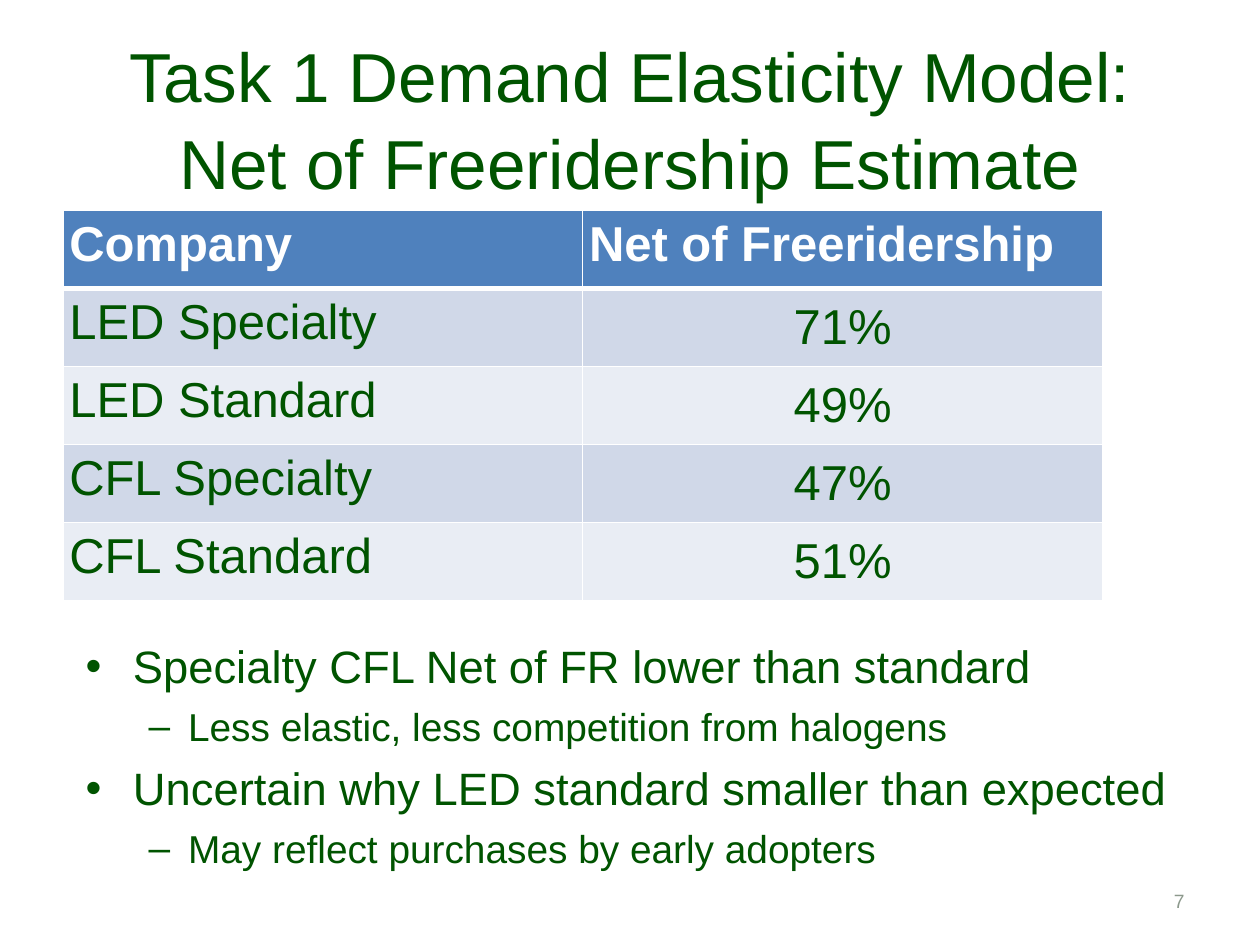
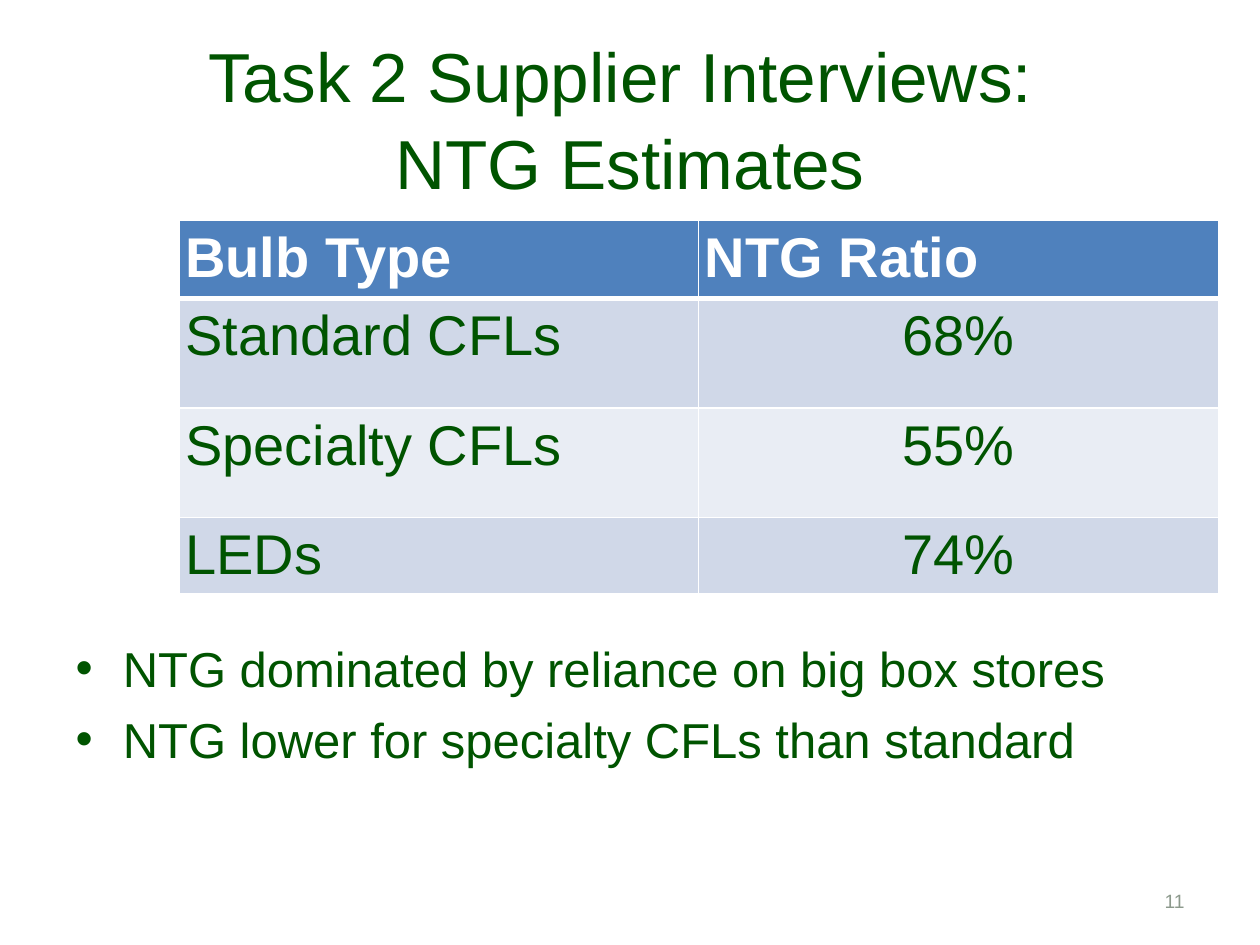
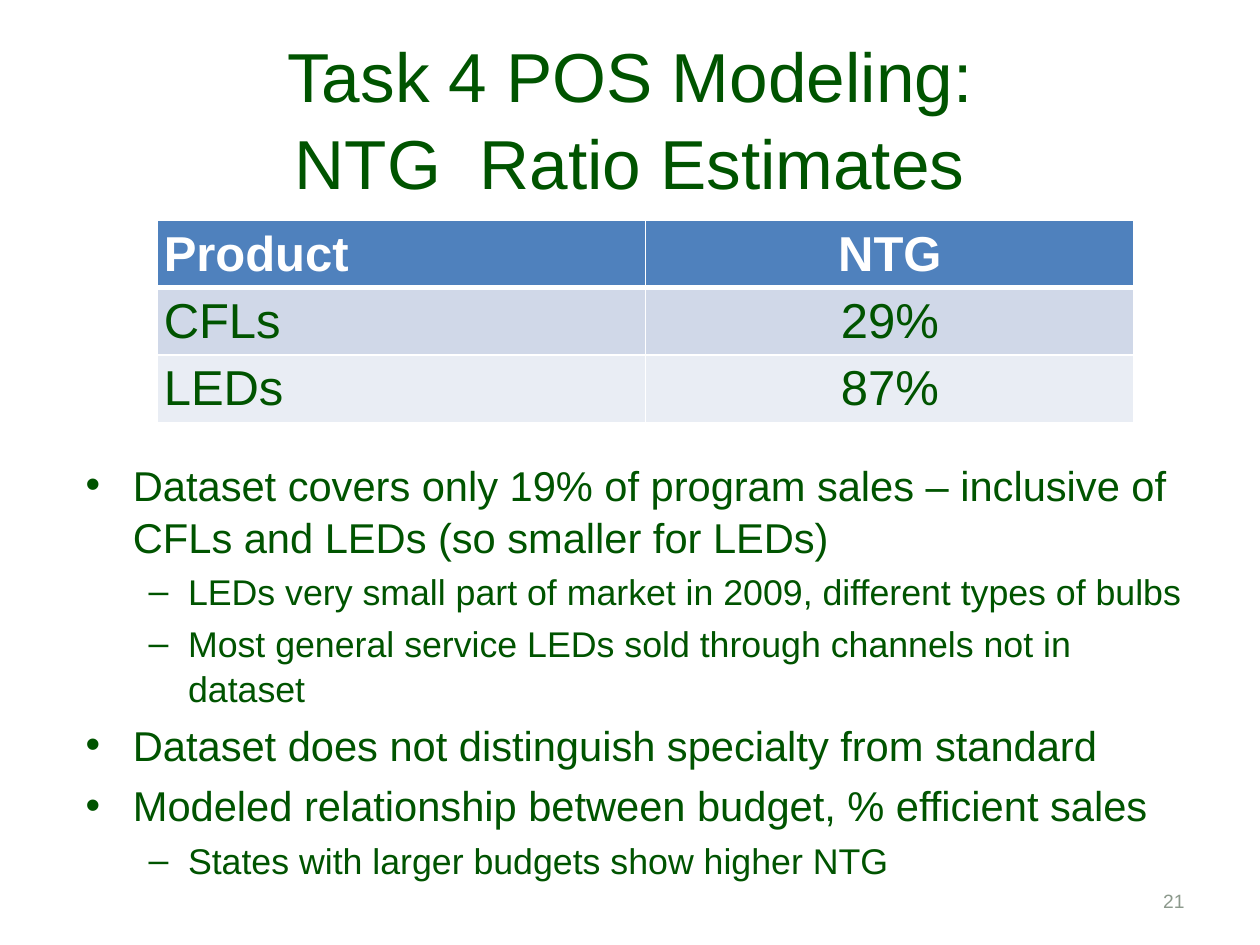
from dataclasses import dataclass

from lxml import etree
from pptx import Presentation
from pptx.dml.color import RGBColor
from pptx.enum.text import MSO_ANCHOR, MSO_AUTO_SIZE, PP_ALIGN
from pptx.oxml.ns import qn
from pptx.util import Inches, Pt

LEFT, CENTER, RIGHT = PP_ALIGN.LEFT, PP_ALIGN.CENTER, PP_ALIGN.RIGHT
TOP, MIDDLE = MSO_ANCHOR.TOP, MSO_ANCHOR.MIDDLE
NO_AUTOFIT = MSO_AUTO_SIZE.NONE


@dataclass(frozen=True)
class Theme:
    font: str = "Arial"
    green: str = "005400"
    white: str = "FFFFFF"
    gray: str = "8C998C"
    header: str = "4F81BD"
    bands: tuple = ("D0D8E8", "E9EDF4")
    title_size: float = 39.6
    number_size: float = 11
    line_spacing: float = 1.04
    cell_margin: float = 0.05
    border: float = 1
    header_border: float = 3


theme = Theme()

slides = [
    {
        "title": "Task 1 Demand Elasticity Model: Net of Freeridership Estimate",
        "number": "7",
        "table_at": (0.5, 1.67, 8.25),
        "row_heights": [0.62] * 5,
        "table_size": 28,
        "header_align": LEFT,
        "value_anchor": MIDDLE,
        "rows": [
            ("Company", "Net of Freeridership"),
            ("LED Specialty", "71%"),
            ("LED Standard", "49%"),
            ("CFL Specialty", "47%"),
            ("CFL Standard", "51%"),
        ],
        "body_at": (0.58, 5, 8.92, 1.75),
        "body_sizes": (25.9, 22.2),
        "bullets": [
            (0, "Specialty CFL Net of FR lower than standard"),
            (1, "Less elastic, less competition from halogens"),
            (0, "Uncertain why LED standard smaller than expected"),
            (1, "May reflect purchases by early adopters"),
        ],
    },
    {
        "title": "Task 2 Supplier Interviews: \vNTG Estimates",
        "number": "11",
        "table_at": (1.42, 1.75, 8.25),
        "row_heights": [0.62, 0.87, 0.87, 0.6],
        "table_size": 32,
        "header_align": LEFT,
        "value_anchor": TOP,
        "rows": [
            ("Bulb Type", "NTG Ratio"),
            ("Standard CFLs", "68%"),
            ("Specialty CFLs", "55%"),
            ("LEDs", "74%"),
        ],
        "body_at": (0.5, 5, 9, 1.25),
        "body_sizes": (28,),
        "bullets": [
            (0, "NTG dominated by reliance on big box stores"),
            (0, "NTG lower for specialty CFLs than standard"),
        ],
    },
    {
        "title": "Task 4 POS Modeling:\vNTG  Ratio Estimates",
        "number": "21",
        "table_at": (1.25, 1.75, 7.75),
        "row_heights": [0.53] * 3,
        "table_size": 28,
        "header_align": CENTER,
        "value_anchor": TOP,
        "rows": [("Product", "NTG"), ("CFLs", "29%"), ("LEDs", "87%")],
        "body_at": (0.58, 3.58, 8.92, 3.12),
        "body_sizes": (23.8, 20.4),
        "bullets": [
            (0, "Dataset covers only 19% of program sales – inclusive of "
                "CFLs and LEDs (so smaller for LEDs)"),
            (1, "LEDs very small part of market in 2009, different types of bulbs"),
            (1, "Most general service LEDs sold through channels not in dataset"),
            (0, "Dataset does not distinguish specialty from standard"),
            (0, "Modeled relationship between budget, % efficient sales"),
            (1, "States with larger budgets show higher NTG"),
        ],
    },
]


def style_text(para, size, color, align=LEFT, bold=False):
    para.alignment = align
    for span in para.runs:
        span.font.name = theme.font
        span.font.size = Pt(size)
        span.font.bold = bold
        span.font.color.rgb = RGBColor.from_string(color)


def add_borders(cell, top, bottom):
    widths = {"L": theme.border, "R": theme.border, "T": top, "B": bottom}
    properties = cell._tc.get_or_add_tcPr()
    for side, width in widths.items():
        line = etree.SubElement(properties, qn(f"a:ln{side}"), w=str(Pt(width)))
        fill = etree.SubElement(line, qn("a:solidFill"))
        etree.SubElement(fill, qn("a:srgbClr"), val=theme.white)


deck = Presentation()
deck.slide_width, deck.slide_height = Inches(10), Inches(7.5)

for content in slides:
    page = deck.slides.add_slide(deck.slide_layouts[1])

    title = page.shapes.title
    title.left, title.top, title.width, title.height = map(Inches, (0.5, 0.3, 9, 1.25))
    title.text_frame.text = content["title"]
    title.text_frame.auto_size = NO_AUTOFIT
    title.text_frame.vertical_anchor = MIDDLE
    title_para = title.text_frame.paragraphs[0]
    title_para.line_spacing = theme.line_spacing
    style_text(title_para, theme.title_size, theme.green, CENTER)

    left, top, width = map(Inches, content["table_at"])
    rows, heights = content["rows"], content["row_heights"]
    table = page.shapes.add_table(
        len(rows), 2, left, top, width, Inches(sum(heights))).table
    for row_index, (texts, height) in enumerate(zip(rows, heights)):
        table.rows[row_index].height = Inches(height)
        is_header = row_index == 0
        for column, text in enumerate(texts):
            cell = table.cell(row_index, column)
            cell.text_frame.text = text
            cell.margin_left = cell.margin_right = Inches(theme.cell_margin)
            cell.margin_top = cell.margin_bottom = Inches(theme.cell_margin)
            add_borders(
                cell,
                theme.header_border if row_index == 1 else theme.border,
                theme.header_border if is_header else theme.border)
            cell.fill.solid()
            cell.fill.fore_color.rgb = RGBColor.from_string(
                theme.header if is_header else theme.bands[(row_index - 1) % 2])
            align = LEFT
            if column == 1:
                align = content["header_align"] if is_header else CENTER
                cell.vertical_anchor = TOP if is_header else content["value_anchor"]
            style_text(cell.text_frame.paragraphs[0], content["table_size"],
                       theme.white if is_header else theme.green, align, is_header)

    body = page.placeholders[1]
    body.left, body.top, body.width, body.height = map(Inches, content["body_at"])
    body.text_frame.text = "\n".join(text for level, text in content["bullets"])
    body.text_frame.auto_size = NO_AUTOFIT
    for para, (level, text) in zip(body.text_frame.paragraphs, content["bullets"]):
        para.level = level
        para.line_spacing = theme.line_spacing
        style_text(para, content["body_sizes"][level], theme.green)
    body.text_frame.paragraphs[0].space_before = Pt(0)

    number_box = page.shapes.add_textbox(*map(Inches, (7.17, 6.95, 2.33, 0.4)))
    number_box.text_frame.word_wrap = True
    number_box.text_frame.vertical_anchor = MIDDLE
    number_box.text_frame.text = content["number"]
    style_text(number_box.text_frame.paragraphs[0], theme.number_size, theme.gray, RIGHT)

deck.save("out.pptx")
